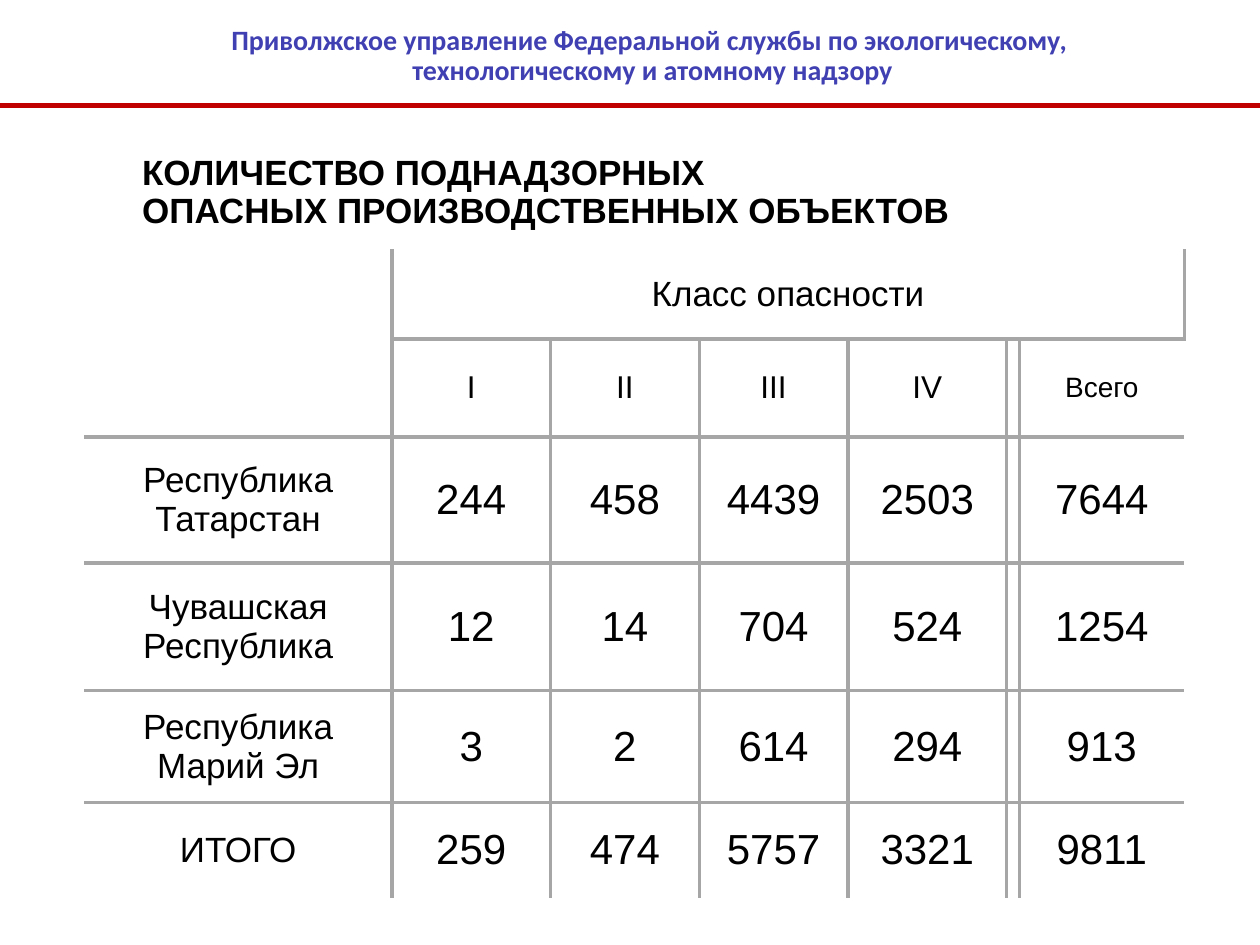
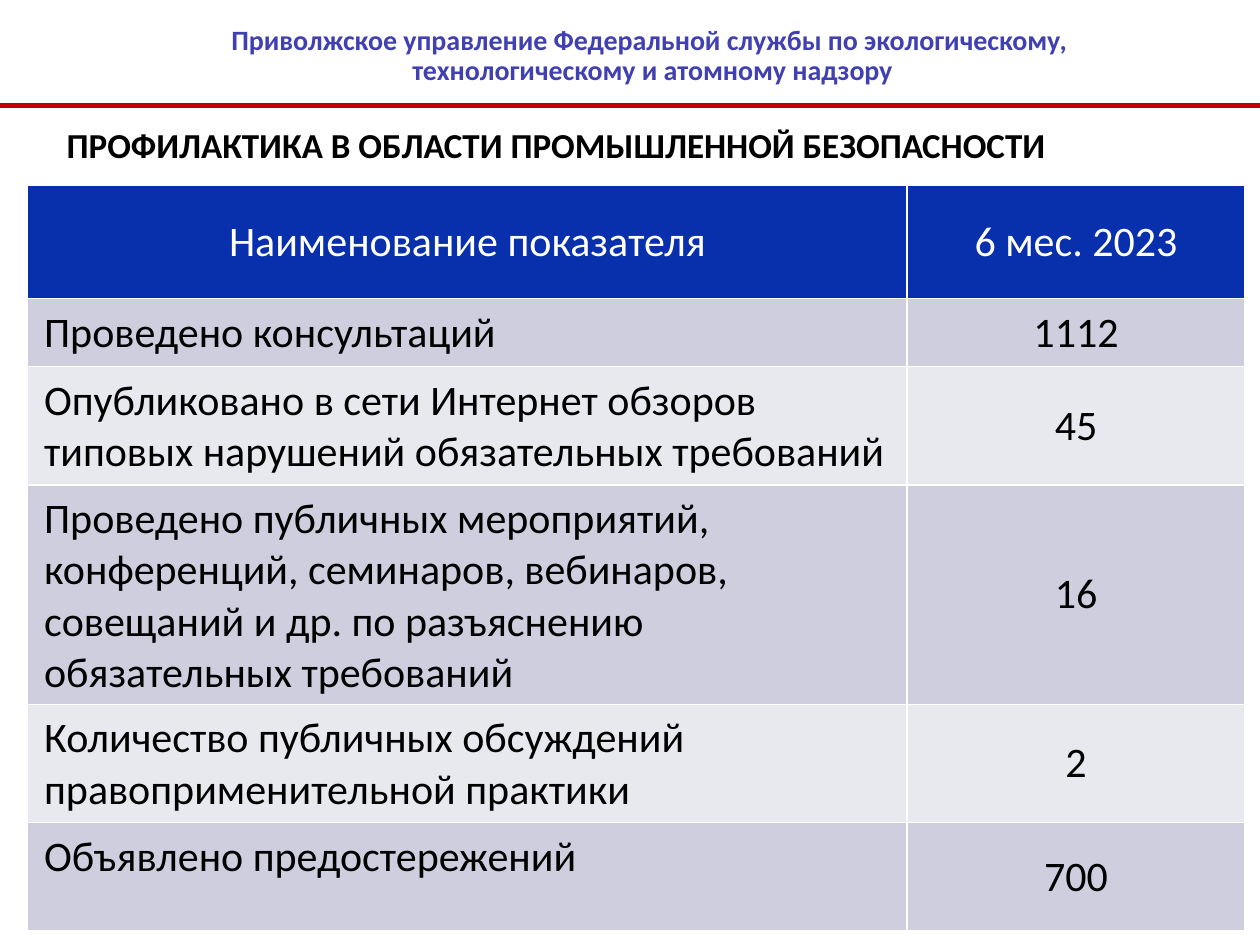
from dataclasses import dataclass

from lxml.etree import SubElement
from pptx import Presentation
from pptx.dml.color import RGBColor
from pptx.enum.shapes import MSO_CONNECTOR
from pptx.enum.text import MSO_ANCHOR, PP_ALIGN
from pptx.oxml import parse_xml
from pptx.oxml.ns import nsdecls, qn
from pptx.util import Inches, Pt


@dataclass(frozen=True)
class Theme:
    agency: str = "4040B3"
    rule: str = "C00000"
    text: str = "000000"
    white: str = "FFFFFF"
    grid: str = "A6A6A6"
    header_fill: str = "082FAC"
    bands: tuple = ("CECEDE", "E8E8EF")
    sans: str = "Arial"
    body: str = "Calibri"
    tiny: int = 16
    small: int = 18
    medium: int = 20
    large: int = 24
    rule_width: float = 3
    grid_width: float = 2.25
    band_line_width: float = 1


THEME = Theme()
SLIDE_SIZE = (10, 7.5)
AGENCY = ("Приволжское управление Федеральной службы по экологическому, \v"
          "технологическому и атомному надзору")

HAZARD_CLASSES = ["I", "II", "III", "IV"]
OBJECT_COUNTS = {
    "Республика Татарстан": (244, 458, 4439, 2503, 7644),
    "Чувашская Республика": (12, 14, 704, 524, 1254),
    "Республика Марий Эл": (3, 2, 614, 294, 913),
    "ИТОГО": (259, 474, 5757, 3321, 9811),
}

PREVENTION_HEADER = ("Наименование показателя", "6 мес. 2023")
PREVENTION_ROWS = [
    ("Проведено консультаций", 1112),
    ("Опубликовано в сети Интернет обзоров типовых нарушений "
     "обязательных требований", 45),
    ("Проведено публичных мероприятий, конференций, семинаров, вебинаров, "
     "совещаний и др. по разъяснению обязательных требований", 16),
    ("Количество публичных обсуждений правоприменительной практики", 2),
    ("Объявлено предостережений", 700),
]


def style_paragraph(paragraph, size, font, color=THEME.text, bold=False,
                    align=PP_ALIGN.LEFT):
    paragraph.alignment = align
    paragraph.font.size = Pt(size)
    paragraph.font.name = font
    paragraph.font.bold = bold
    paragraph.font.color.rgb = RGBColor.from_string(color)


def add_text(slide, box, lines, size, font, color=THEME.text,
             align=PP_ALIGN.LEFT, anchor=MSO_ANCHOR.MIDDLE, line_spacing=0.9):
    """Add a bold text box with one paragraph per line."""
    frame = slide.shapes.add_textbox(*map(Inches, box)).text_frame
    frame.word_wrap = True
    frame.vertical_anchor = anchor
    for index, line in enumerate(lines):
        paragraph = frame.add_paragraph() if index else frame.paragraphs[0]
        paragraph.text = line
        paragraph.line_spacing = line_spacing
        style_paragraph(paragraph, size, font, color, True, align)


def add_agency_band(slide, box):
    """Write the agency name in the box and rule off the slide beneath it."""
    add_text(slide, box, [AGENCY], THEME.tiny, THEME.body, THEME.agency,
             PP_ALIGN.CENTER)
    left, top, width, height = box
    rule_top = Inches(top + height + 0.09)
    rule = slide.shapes.add_connector(MSO_CONNECTOR.STRAIGHT, 0, rule_top,
                                      Inches(SLIDE_SIZE[0]), rule_top)
    rule.line.color.rgb = RGBColor.from_string(THEME.rule)
    rule.line.width = Pt(THEME.rule_width)
    SubElement(rule.element.spPr, qn("a:effectLst"))


def add_plain_table(slide, left, top, columns, rows):
    """Add a table without banding, with the given column widths and row heights."""
    table = slide.shapes.add_table(
        len(rows), len(columns), Inches(left), Inches(top),
        Inches(sum(columns)), Inches(sum(rows))).table
    table.first_row = table.horz_banding = False
    for column, width in zip(table.columns, columns):
        column.width = Inches(width)
    for row, height in zip(table.rows, rows):
        row.height = Inches(height)
    return table


def set_cell_text(cell, text, size, font, color=THEME.text,
                  align=PP_ALIGN.CENTER, anchor=MSO_ANCHOR.MIDDLE):
    cell.text = str(text)
    cell.vertical_anchor = anchor
    style_paragraph(cell.text_frame.paragraphs[0], size, font, color, align=align)


def set_margins(cell, horizontal, vertical):
    cell.margin_left = cell.margin_right = Inches(horizontal)
    cell.margin_top = cell.margin_bottom = Inches(vertical)


def set_borders(cell, sides, color, width):
    """Draw the sides named by the letters L, R, T, B and clear the others."""
    properties = cell._tc.get_or_add_tcPr()
    for index, side in enumerate("LRTB"):
        if side in sides:
            paint = f'<a:solidFill><a:srgbClr val="{color}"/></a:solidFill>'
        else:
            paint = "<a:noFill/>"
        properties.insert(index, parse_xml(
            f'<a:ln{side} {nsdecls("a")} w="{Pt(width)}">{paint}</a:ln{side}>'))


def add_object_table(slide, left, top):
    columns = [2.44, 1.26, 1.18, 1.18, 1.26, 0.1, 1.31]
    rows = [0.71, 0.78, 1, 1.01, 0.89, 0.76]
    table = add_plain_table(slide, left, top, columns, rows)
    last_row, last_column = len(rows) - 1, len(columns) - 1
    for row in range(len(rows)):
        for column in range(len(columns)):
            cell = table.cell(row, column)
            cell.fill.background()
            margin = 0 if column == last_column - 1 else 0.04
            set_margins(cell, margin, margin)
            inner = {"L": column > 0, "R": column < last_column,
                     "T": row > 0, "B": row < last_row}
            set_borders(cell, [side for side in inner if inner[side]],
                        THEME.grid, THEME.grid_width)
    table.cell(0, 0).merge(table.cell(1, 0))
    table.cell(0, 1).merge(table.cell(0, last_column))

    set_cell_text(table.cell(0, 1), "Класс опасности", THEME.medium, THEME.sans)
    for column, name in enumerate(HAZARD_CLASSES, 1):
        set_cell_text(table.cell(1, column), name, THEME.small, THEME.sans)
    set_cell_text(table.cell(1, last_column), "Всего", THEME.tiny, THEME.sans)

    count_columns = [1, 2, 3, 4, last_column]
    for row, (region, counts) in enumerate(OBJECT_COUNTS.items(), 2):
        set_cell_text(table.cell(row, 0), region, THEME.medium, THEME.sans)
        for column, count in zip(count_columns, counts):
            set_cell_text(table.cell(row, column), count, THEME.large, THEME.sans)


def add_prevention_table(slide, left, top):
    table = add_plain_table(slide, left, top, [6.98, 2.68],
                            [0.9, 0.51, 0.9, 1.67, 0.9, 0.86])
    for row, values in enumerate([PREVENTION_HEADER, *PREVENTION_ROWS]):
        is_header = row == 0
        fill = THEME.header_fill if is_header else THEME.bands[(row - 1) % 2]
        color = THEME.white if is_header else THEME.text
        for column, value in enumerate(values):
            cell = table.cell(row, column)
            cell.fill.solid()
            cell.fill.fore_color.rgb = RGBColor.from_string(fill)
            set_margins(cell, 0.13, 0.07)
            set_borders(cell, "LRTB", THEME.white, THEME.band_line_width)
            if is_header or column:
                set_cell_text(cell, value, THEME.large, THEME.body, color)
            else:
                set_cell_text(cell, value, THEME.large, THEME.body, color,
                              PP_ALIGN.LEFT, MSO_ANCHOR.TOP)


def add_agency_slide(presentation):
    slide = presentation.slides.add_slide(presentation.slide_layouts[6])
    add_agency_band(slide, (0.93, 0.15, 8.5, 0.6))
    return slide


def add_objects_slide(presentation):
    slide = add_agency_slide(presentation)
    add_object_table(slide, 0.67, 1.98)
    add_text(slide, (1.03, 1.19, 8.3, 0.69),
             ["КОЛИЧЕСТВО ПОДНАДЗОРНЫХ", "ОПАСНЫХ ПРОИЗВОДСТВЕННЫХ ОБЪЕКТОВ"],
             THEME.medium, THEME.sans, anchor=MSO_ANCHOR.BOTTOM)


def add_prevention_slide(presentation):
    slide = add_agency_slide(presentation)
    add_text(slide, (0.43, 0.93, 9.45, 0.44),
             ["ПРОФИЛАКТИКА В ОБЛАСТИ ПРОМЫШЛЕННОЙ БЕЗОПАСНОСТИ"],
             THEME.medium, THEME.body, line_spacing=1)
    add_prevention_table(slide, 0.22, 1.47)


def main():
    presentation = Presentation()
    presentation.slide_width, presentation.slide_height = map(Inches, SLIDE_SIZE)
    add_objects_slide(presentation)
    add_prevention_slide(presentation)
    presentation.save("out.pptx")


if __name__ == "__main__":
    main()
